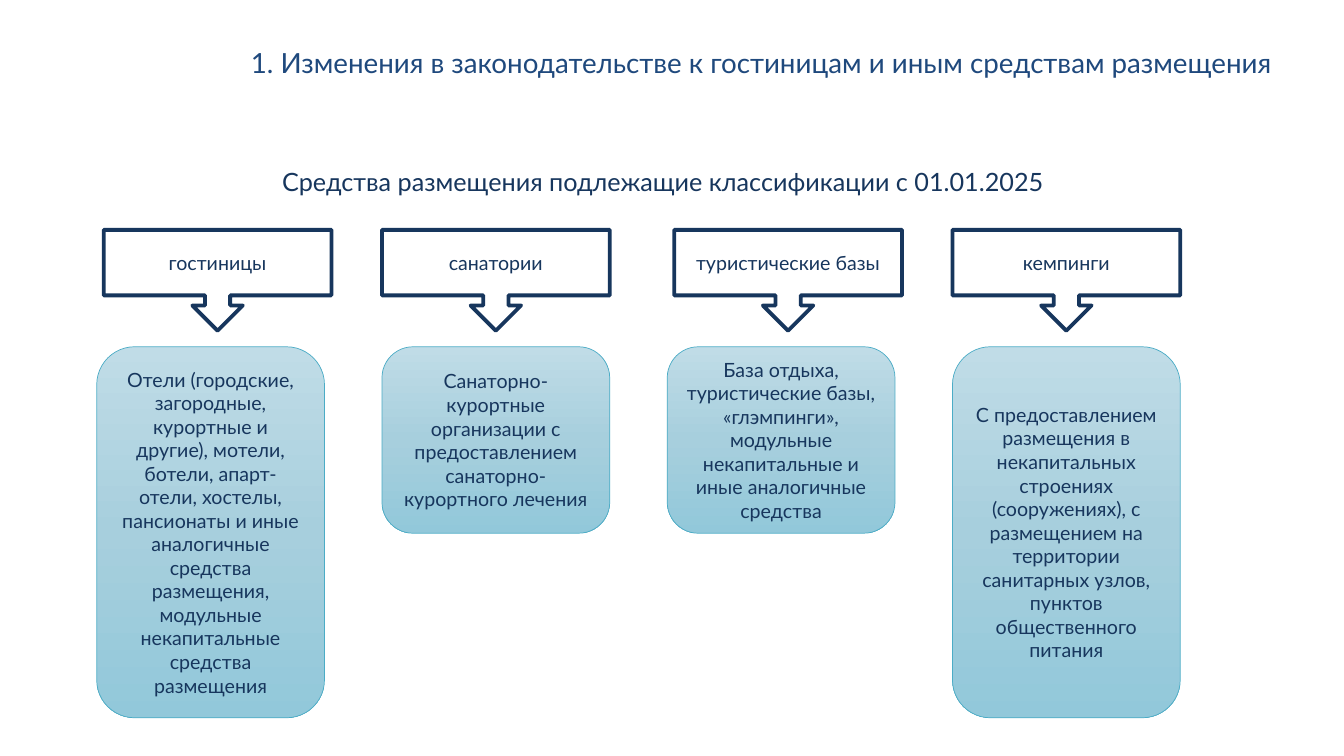
"""Builds a slide on the classification of accommodation facilities."""
from copy import deepcopy

from pptx import Presentation
from pptx.dml.color import RGBColor
from pptx.enum import shapes, text
from pptx.oxml.ns import qn
from pptx.util import Pt

TITLE = "1. Изменения в законодательстве к гостиницам и иным средствам размещения"
SUBTITLE = "Средства размещения подлежащие классификации с 01.01.2025"
TALL, SHORT = 265, 133.2
FACILITIES = [
    ("гостиницы", 5, TALL,
     "Отели (городские, загородные, курортные и другие), мотели, ботели, "
     "апарт-отели, хостелы, пансионаты и иные аналогичные средства размещения, "
     "модульные некапитальные средства размещения"),
    ("санатории", 0, SHORT,
     "Санаторно-курортные организации с предоставлением "
     "санаторно-курортного лечения"),
    ("туристические базы", 5, SHORT,
     "База отдыха, туристические базы, «глэмпинги», модульные некапитальные "
     "и иные аналогичные средства"),
    ("кемпинги", 0, TALL,
     "С предоставлением размещения в некапитальных строениях (сооружениях), "
     "с размещением на территории санитарных узлов, пунктов общественного питания"),
]
COLORS = {"title": "1F497D", "ink": "17365D", "white": "FFFFFF", "edge": "4BACC6"}
GRADIENT = [(0, "C0DCE7"), (0.5, "A7CFDD"), (1, "92C8DA")]
FONT = "Lato"
LEFT, PITCH, WIDTH = 69.1, 203.76, 162.7
CALLOUT_TOP, CALLOUT_HEIGHT, CARD_TOP = 164.2, 72, 247.7


def rgb(name):
    return RGBColor.from_string(COLORS.get(name, name))


def write(sp, words, size=14, color="ink", align=text.PP_ALIGN.CENTER,
          anchor=text.MSO_ANCHOR.MIDDLE, wrap=True, spacing=None):
    tf = sp.text_frame
    tf.word_wrap = wrap
    tf.vertical_anchor = anchor
    p = tf.paragraphs[0]
    p.alignment = align
    p.line_spacing = spacing
    r = p.add_run()
    r.text = words
    r.font.name = FONT
    r.font.size = Pt(size)
    r.font.color.rgb = rgb(color)


def add_box(s, kind, box, line, line_width):
    sp = s.shapes.add_shape(kind, *map(Pt, box))
    sp.shadow.inherit = False
    sp.line.color.rgb = rgb(line)
    sp.line.width = Pt(line_width)
    return sp


def fill_gradient(sp):
    sp.fill.gradient()
    sp.fill.gradient_angle = 270
    stops = sp._element.spPr.find(qn("a:gradFill")).find(qn("a:gsLst"))
    stops.insert(1, deepcopy(stops[0]))
    for stop, (position, color) in zip(sp.fill.gradient_stops, GRADIENT):
        stop.position = position
        stop.color.rgb = rgb(color)


def main():
    prs = Presentation()
    prs.slide_width, prs.slide_height = Pt(960), Pt(540)
    s = prs.slides.add_slide(prs.slide_layouts[6])

    heading = {"align": text.PP_ALIGN.LEFT, "anchor": text.MSO_ANCHOR.TOP}
    title = s.shapes.add_textbox(Pt(172.1), Pt(31.7), Pt(756), Pt(49))
    write(title, TITLE, size=19.8, color="title", spacing=0.89, **heading)

    for i, (name, shift, height, details) in enumerate(FACILITIES):
        x = LEFT + i * PITCH
        callout = add_box(s, shapes.MSO_SHAPE.DOWN_ARROW_CALLOUT,
                          (x + shift, CALLOUT_TOP, WIDTH, CALLOUT_HEIGHT), "ink", 2.75)
        callout.fill.solid()
        callout.fill.fore_color.rgb = rgb("white")
        write(callout, name)

        card = add_box(s, shapes.MSO_SHAPE.ROUNDED_RECTANGLE,
                       (x, CARD_TOP, WIDTH, height), "edge", 0.5)
        fill_gradient(card)
        write(card, details)

    subtitle = s.shapes.add_textbox(Pt(194.4), Pt(115.2), Pt(565.2), Pt(28.8))
    write(subtitle, SUBTITLE, size=18, wrap=False, **heading)
    subtitle.text_frame.auto_size = text.MSO_AUTO_SIZE.SHAPE_TO_FIT_TEXT

    prs.save("out.pptx")


if __name__ == "__main__":
    main()
